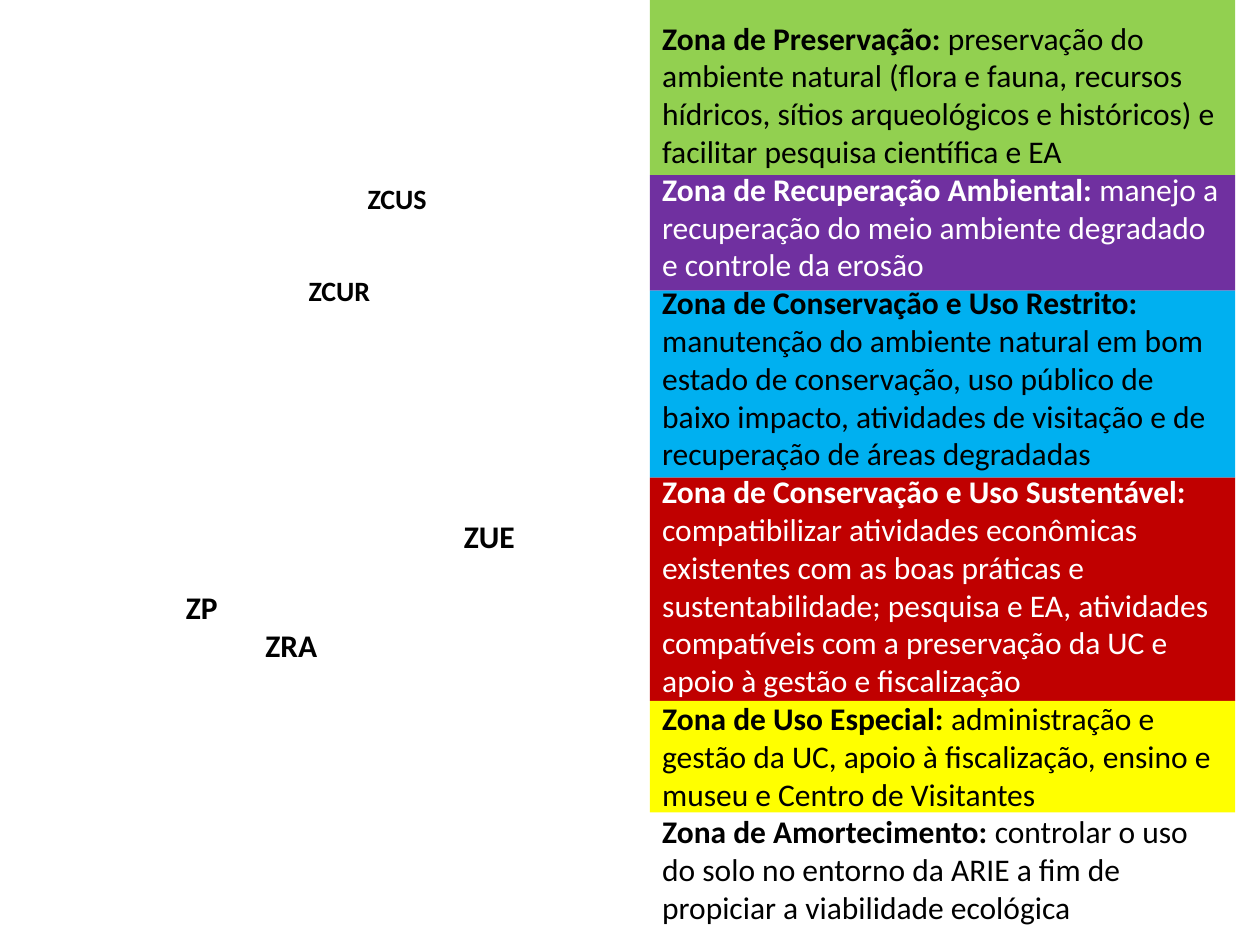
from pptx import Presentation, util as u
from pptx.dml.color import RGBColor
from pptx.enum import shapes, text

THEME = {
    "font": "Calibri", "body": 18, "small": 16,
    "black": "000000", "white": "FFFFFF",
    "green": "92D050", "purple": "7030A0", "blue": "00B0F0",
    "red": "C00000", "yellow": "FFFF00",
}

# heading, description, text colour, band colour, band height (cm)
ZONES = [
    ("Zona de Preservação: ",
     "preservação do ambiente natural (flora e fauna, recursos hídricos, sítios "
     "arqueológicos e históricos) e facilitar pesquisa científica e EA",
     "black", "green", 3.53),
    ("Zona de Recuperação Ambiental: ",
     "manejo a recuperação do meio ambiente degradado e controle da erosão",
     "white", "purple", 2.33),
    ("Zona de Conservação e Uso Restrito:",
     " manutenção do ambiente natural em bom estado de conservação, uso público de "
     "baixo impacto, atividades de visitação e de recuperação de áreas degradadas",
     "black", "blue", 3.77),
    ("Zona de Conservação e Uso Sustentável: ",
     "compatibilizar atividades econômicas existentes com as boas práticas e "
     "sustentabilidade; pesquisa e EA, atividades compatíveis com a preservação da "
     "UC e apoio à gestão e fiscalização",
     "white", "red", 4.5),
    ("Zona de Uso Especial: ",
     "administração e gestão da UC, apoio à fiscalização, ensino e museu e Centro "
     "de Visitantes",
     "black", "yellow", 2.25),
    ("Zona de Amortecimento: ",
     "controlar o uso do solo no entorno da ARIE a fim de propiciar a viabilidade "
     "ecológica",
     "black", None, 0),
]

# acronym, left, top, width, height (cm), type size
MAP_LABELS = [
    ("ZP", 3.5, 11.73, 1.4, 1.02, "body"),
    ("ZRA", 5.1, 12.5, 1.8, 1.02, "body"),
    ("ZCUS", 7.16, 3.53, 2.54, 0.94, "small"),
    ("ZCUR", 5.97, 5.38, 2.54, 0.94, "small"),
    ("ZUE", 9.1, 10.29, 1.8, 1.02, "body"),
]

PANEL_LEFT, PANEL_WIDTH = 13.1, 11.8
TEXT_TOP, TEXT_HEIGHT = 0.25, 18.72


def color(name):
    return RGBColor.from_string(THEME[name])


def style(r, size, ink, bold):
    r.font.name = THEME["font"]
    r.font.size = u.Pt(THEME[size])
    r.font.color.rgb = color(ink)
    r.font.bold = bold


def add_text_frame(s, *box):
    tf = s.shapes.add_textbox(*map(u.Cm, box)).text_frame
    tf.word_wrap = True
    tf.auto_size = text.MSO_AUTO_SIZE.SHAPE_TO_FIT_TEXT
    return tf


def add_label(s, label, left, top, width, height, size):
    p = add_text_frame(s, left, top, width, height).paragraphs[0]
    p.text = label
    style(p.runs[0], size, "black", True)


def add_band(s, top, height, fill):
    sp = s.shapes.add_shape(shapes.MSO_SHAPE.RECTANGLE, u.Cm(PANEL_LEFT), u.Cm(top),
                            u.Cm(PANEL_WIDTH), u.Cm(height))
    sp.shadow.inherit = False
    sp.fill.solid()
    sp.fill.fore_color.rgb = color(fill)
    sp.line.fill.background()


def add_zones(s):
    """Stack the colour bands, then lay one continuous text over them."""
    top = 0
    for _, _, _, fill, height in ZONES:
        if fill:
            add_band(s, top, height, fill)
        top += height

    tf = add_text_frame(s, PANEL_LEFT, TEXT_TOP, PANEL_WIDTH, TEXT_HEIGHT)
    for i, (heading, description, ink, _, _) in enumerate(ZONES):
        p = tf.add_paragraph() if i else tf.paragraphs[0]
        for words, bold in ((heading, True), (description, False)):
            r = p.add_run()
            r.text = words
            style(r, "body", ink, bold)


def main():
    prs = Presentation()
    prs.slide_width, prs.slide_height = u.Cm(25.4), u.Cm(19.05)
    s = prs.slides.add_slide(prs.slide_layouts[6])
    for label in MAP_LABELS:
        add_label(s, *label)
    add_zones(s)
    prs.save("out.pptx")


if __name__ == "__main__":
    main()
